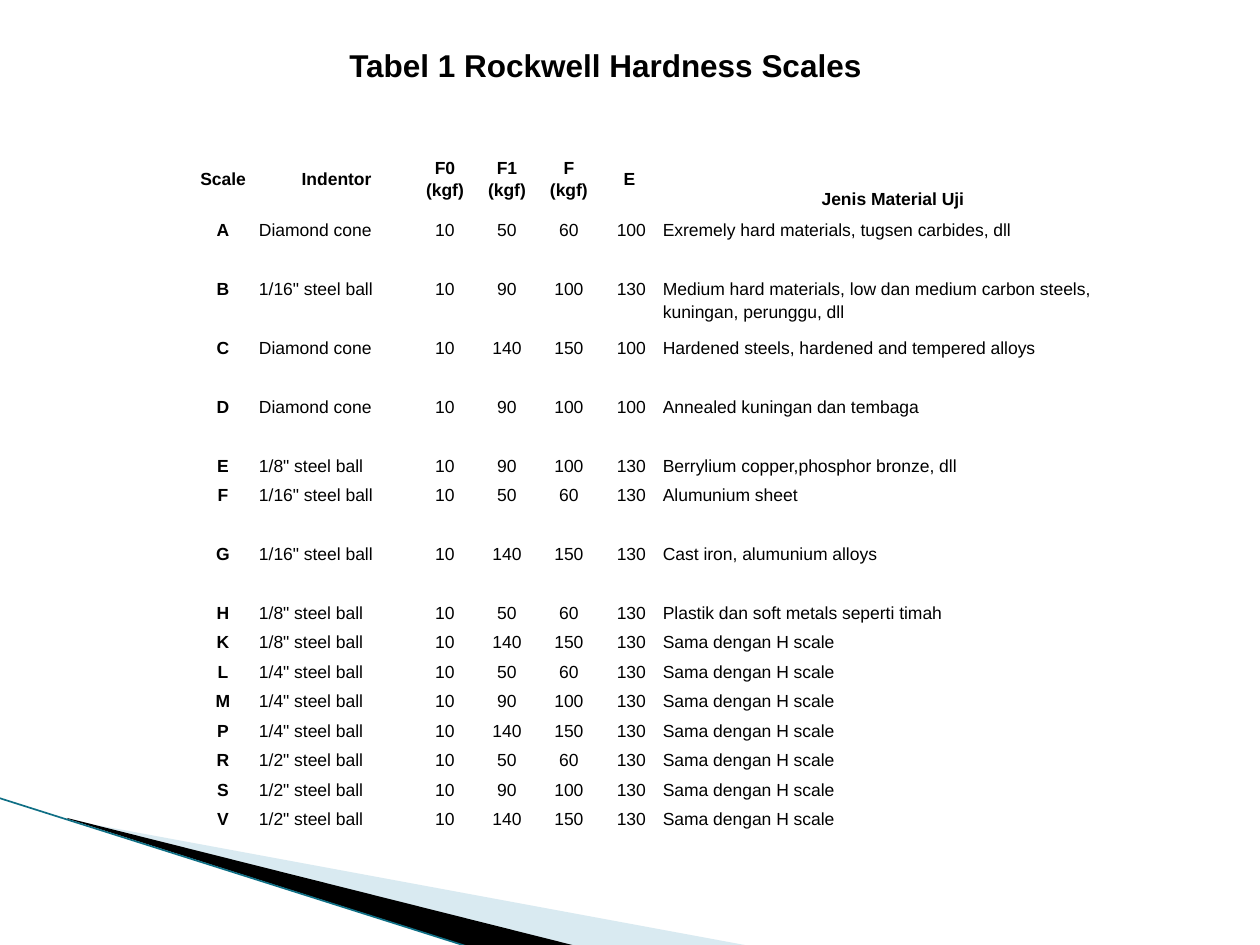
from dataclasses import dataclass
from itertools import pairwise

import pptx
import pptx.dml.color
import pptx.enum.shapes
import pptx.enum.text
import pptx.oxml.ns
import pptx.util
from lxml import etree

SCALE = 914400 / 126
FONT = "Arial"
COLORS = {"text": "000000", "band": "000000", "tint": "A0CBDC", "edge": "0F6F85"}
CENTER = pptx.enum.text.PP_ALIGN.CENTER
LEFT = pptx.enum.text.PP_ALIGN.LEFT
MIDDLE = pptx.enum.text.MSO_ANCHOR.MIDDLE
TOP = pptx.enum.text.MSO_ANCHOR.TOP
BOTTOM = pptx.enum.text.MSO_ANCHOR.BOTTOM
NO_GRID_STYLE = "{2D5ABB26-0587-4C30-8999-92F81FD0307C}"

TABLE_LEFT, TABLE_TOP, HEADER_HEIGHT = 187, 137, 81
LINE_HEIGHT = 29.45
COLUMN_WIDTHS = [72, 155, 62, 62, 62, 63, 460]
HEADINGS = ["Scale", "Indentor", "F0\v(kgf)", "F1\v(kgf)", "F\v(kgf)", "E", "Jenis Material Uji"]
PRELOAD = 10


@dataclass
class Hardness:
    scale: str
    indentor: str
    added_load: int
    constant: int
    material: str = "Sama dengan H scale"
    lines: int = 1

    def values(self) -> list[str]:
        loads = (PRELOAD, self.added_load, PRELOAD + self.added_load, self.constant)
        return [self.scale, self.indentor, *map(str, loads), self.material]


@dataclass
class Wedge:
    frame: tuple[int, int, int, int]
    points: list[tuple[int, int]]
    color: str
    opacity: int = 100


SCALES = [
    Hardness("A", "Diamond cone", 50, 100, "Exremely hard materials, tugsen carbides, dll", 2),
    Hardness("B", '1/16" steel ball', 90, 130,
             "Medium hard materials, low dan medium carbon steels, kuningan, perunggu, dll", 2),
    Hardness("C", "Diamond cone", 140, 100, "Hardened steels, hardened and tempered alloys", 2),
    Hardness("D", "Diamond cone", 90, 100, "Annealed kuningan dan tembaga", 2),
    Hardness("E", '1/8" steel ball', 90, 130, "Berrylium copper,phosphor bronze, dll"),
    Hardness("F", '1/16" steel ball', 50, 130, "Alumunium sheet", 2),
    Hardness("G", '1/16" steel ball', 140, 130, "Cast iron, alumunium alloys", 2),
    Hardness("H", '1/8" steel ball', 50, 130, "Plastik dan soft metals seperti timah"),
    Hardness("K", '1/8" steel ball', 140, 130),
    Hardness("L", '1/4" steel ball', 50, 130),
    Hardness("M", '1/4" steel ball', 90, 130),
    Hardness("P", '1/4" steel ball', 140, 130),
    Hardness("R", '1/2" steel ball', 50, 130),
    Hardness("S", '1/2" steel ball', 90, 130),
    Hardness("V", '1/2" steel ball', 140, 130),
]
WEDGES = [
    Wedge((98, 689, 524, 199), [(69, 820), (750, 946), (575, 946), (69, 819)], "tint", 40),
    Wedge((-8, 798, 524, 116), [(67, 818), (576, 946), (470, 947), (68, 819)], "band"),
]


def px(length: float) -> int:
    return round(length * SCALE)


def color(name: str) -> pptx.dml.color.RGBColor:
    return pptx.dml.color.RGBColor.from_string(COLORS[name])


def write(para, text: str, *, size: int = 10, bold: bool = False, align=CENTER,
          spacing: float = 1.15, after: int = 10) -> None:
    para.text = text
    para.alignment = align
    para.line_spacing = spacing
    para.space_before = pptx.util.Pt(0)
    para.space_after = pptx.util.Pt(after)
    for span in para.runs:
        span.font.name = FONT
        span.font.size = pptx.util.Pt(size)
        span.font.bold = bold
        span.font.color.rgb = color("text")
    for line_break in para._p.findall(pptx.oxml.ns.qn("a:br")):
        etree.SubElement(line_break, pptx.oxml.ns.qn("a:rPr"), sz=str(size * 100))


def fit_frame(shape, frame: tuple[int, int, int, int]) -> None:
    left, top, width, height = map(px, frame)
    shift_x, shift_y = shape.left - left, shape.top - top
    outline = shape._element.spPr.find(".//" + pptx.oxml.ns.qn("a:path"))
    outline.set("w", str(width))
    outline.set("h", str(height))
    for point in outline.iter(pptx.oxml.ns.qn("a:pt")):
        point.set("x", str(int(point.get("x")) + shift_x))
        point.set("y", str(int(point.get("y")) + shift_y))
    shape.left, shape.top, shape.width, shape.height = left, top, width, height


def draw_wedge(page, wedge: Wedge) -> None:
    builder = page.shapes.build_freeform(
        *(px(value) for value in wedge.points[0]), scale=1.0)
    builder.add_line_segments([(px(x), px(y)) for x, y in wedge.points[1:]], close=True)
    shape = builder.convert_to_shape()
    fit_frame(shape, wedge.frame)
    shape.shadow.inherit = False
    shape.line.fill.background()
    shape.fill.solid()
    shape.fill.fore_color.rgb = color(wedge.color)
    if wedge.opacity < 100:
        tone = shape._element.spPr.find(".//" + pptx.oxml.ns.qn("a:srgbClr"))
        etree.SubElement(tone, pptx.oxml.ns.qn("a:alpha"), val=str(wedge.opacity * 1000))


def draw_edge(page) -> None:
    edge = page.shapes.add_connector(
        pptx.enum.shapes.MSO_CONNECTOR.STRAIGHT, px(-1), px(798), px(469), px(947))
    edge.line.color.rgb = color("edge")
    edge.line.width = pptx.util.Pt(0.95)
    etree.SubElement(edge._element.spPr, pptx.oxml.ns.qn("a:effectLst"))


def draw_title(page) -> None:
    title = page.shapes.title
    title.left, title.top, title.width, title.height = map(px, (334, 40, 543, 50))
    frame = title.text_frame
    frame.word_wrap = False
    frame.vertical_anchor = MIDDLE
    write(frame.paragraphs[0], "Tabel 1 Rockwell Hardness Scales",
          size=18, bold=True, spacing=1.0, after=0)


def draw_table(page) -> None:
    edges = [0, HEADER_HEIGHT]
    lines = 0
    for hardness in SCALES:
        lines += hardness.lines
        edges.append(round(HEADER_HEIGHT + lines * LINE_HEIGHT))
    frame = page.shapes.add_table(
        len(SCALES) + 1, len(COLUMN_WIDTHS), px(TABLE_LEFT), px(TABLE_TOP),
        px(sum(COLUMN_WIDTHS)), px(edges[-1]))
    table = frame.table
    table.first_row = table.horz_banding = False
    table._tbl.tblPr.find(pptx.oxml.ns.qn("a:tableStyleId")).text = NO_GRID_STYLE
    for column, width in zip(table.columns, COLUMN_WIDTHS):
        column.width = px(width)
    for row, (upper, lower) in zip(table.rows, pairwise(edges)):
        row.height = px(lower - upper)

    contents = [HEADINGS] + [hardness.values() for hardness in SCALES]
    for row_index, values in enumerate(contents):
        heading = row_index == 0
        for column_index, text in enumerate(values):
            cell = table.cell(row_index, column_index)
            cell.fill.background()
            cell.margin_left = cell.margin_right = cell.margin_bottom = 0
            cell.margin_top = px(1) if heading else 0
            cell.vertical_anchor = MIDDLE if heading else TOP
            write(cell.text_frame.paragraphs[0], text,
                  bold=heading or column_index == 0,
                  align=LEFT if not heading and column_index in (1, 6) else CENTER)
    table.cell(0, 5).margin_right = px(4)
    material_heading = table.cell(0, 6)
    material_heading.vertical_anchor = BOTTOM
    material_heading.margin_bottom = px(9)


def main() -> None:
    deck = pptx.Presentation()
    deck.slide_width, deck.slide_height = px(1260), px(945)
    page = deck.slides.add_slide(deck.slide_layouts[5])
    for wedge in WEDGES:
        draw_wedge(page, wedge)
    draw_edge(page)
    draw_table(page)
    draw_title(page)
    deck.save("out.pptx")


if __name__ == "__main__":
    main()
